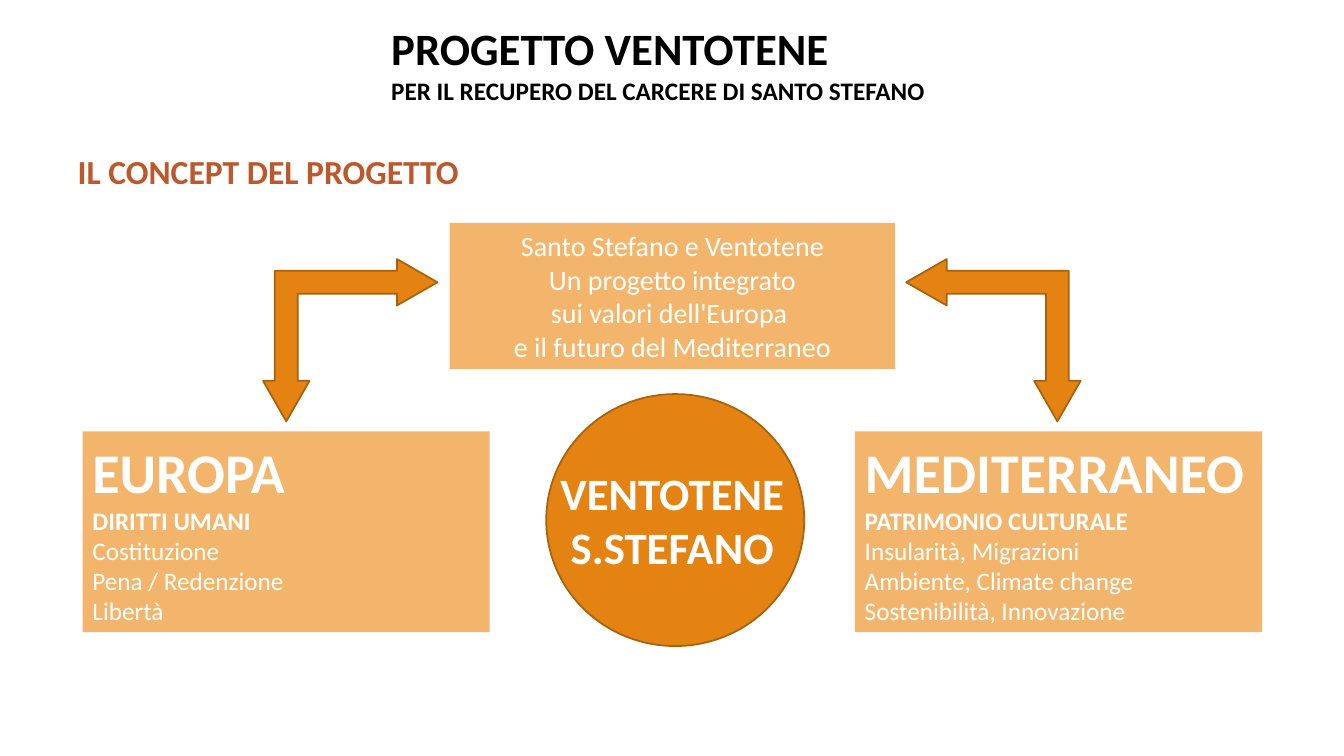
from pptx import Presentation
from pptx.dml.color import RGBColor
from pptx.enum.shapes import MSO_SHAPE
from pptx.enum.text import MSO_ANCHOR, PP_ALIGN
from pptx.util import Pt

RECT, OVAL, ELBOW = MSO_SHAPE.RECTANGLE, MSO_SHAPE.OVAL, MSO_SHAPE.LEFT_UP_ARROW
LEFT, CENTER = PP_ALIGN.LEFT, PP_ALIGN.CENTER
TOP, MIDDLE = MSO_ANCHOR.TOP, MSO_ANCHOR.MIDDLE
BLACK, WHITE, RUST = "000000", "FFFFFF", "BD582C"
PALE, ORANGE, BROWN = "F3B56C", "E48312", "A9610D"


def write(holder, lines, color, align, anchor):
    """Fill a text frame with (text, size, bold) lines."""
    frame = holder.text_frame
    frame.word_wrap = True
    frame.vertical_anchor = anchor
    frame.text = "\n".join(text for text, size, bold in lines)
    for paragraph, (text, size, bold) in zip(frame.paragraphs, lines):
        paragraph.alignment = align
        font = paragraph.runs[0].font
        font.name, font.size, font.bold = "Calibri", Pt(size), bold
        font.color.rgb = RGBColor.from_string(color)


def add_figure(kind, left, top, width, height, fill, outline=None):
    figure = slide.shapes.add_shape(kind, Pt(left), Pt(top), Pt(width), Pt(height))
    figure.shadow.inherit = False
    figure.fill.solid()
    figure.fill.fore_color.rgb = RGBColor.from_string(fill)
    if outline:
        figure.line.color.rgb = RGBColor.from_string(outline)
        figure.line.width = Pt(1.25)
    else:
        figure.line.fill.background()
    return figure


prs = Presentation()
prs.slide_width, prs.slide_height = Pt(960), Pt(540)
slide = prs.slides.add_slide(prs.slide_layouts[5])

# Title and section heading
title = slide.shapes.title
title.left, title.top, title.width, title.height = Pt(272.2), Pt(11.5), Pt(405.4), Pt(67.7)
write(title, [("PROGETTO VENTOTENE", 32, True),
              ("PER IL RECUPERO DEL CARCERE DI SANTO STEFANO", 18, True)], BLACK, LEFT, TOP)
heading = slide.shapes.add_textbox(Pt(48.4), Pt(104.4), Pt(405.4), Pt(36))
write(heading, [("IL CONCEPT DEL PROGETTO", 24, True)], RUST, LEFT, TOP)

# Shared concept
concept = add_figure(RECT, 321.2, 159.2, 318.2, 104.4, PALE)
concept_lines = ["Santo Stefano e Ventotene", "Un progetto integrato",
                 "sui valori dell'Europa ", "e il futuro del Mediterraneo"]
write(concept, [(line, 20, False) for line in concept_lines], WHITE, CENTER, MIDDLE)

# The two themes
themes = [
    (59, "EUROPA", "DIRITTI UMANI", ["Costituzione", "Pena / Redenzione", "Libertà"]),
    (610.6, "MEDITERRANEO", "PATRIMONIO CULTURALE",
     ["Insularità, Migrazioni", "Ambiente, Climate change", "Sostenibilità, Innovazione"]),
]
for left, name, subject, topics in themes:
    theme = add_figure(RECT, left, 308.2, 290.9, 143.3, PALE)
    lines = [(name, 40, True), (subject, 18, True)] + [(topic, 18, False) for topic in topics]
    write(theme, lines, WHITE, LEFT, MIDDLE)

# Islands at the centre
add_figure(OVAL, 390.2, 281.5, 184.3, 180, ORANGE, BROWN)
islands = slide.shapes.add_textbox(Pt(378.7), Pt(329), Pt(203), Pt(85))
write(islands, [("VENTOTENE", 32, True), ("S.STEFANO", 32, True)], WHITE, CENTER, TOP)

# Elbow arrows from the concept to each theme, placed by their centres
for center_x, width, height, turn in [(250.2, 124.6, 116, 180), (709.6, 116, 124.6, 270)]:
    elbow = add_figure(ELBOW, center_x - width / 2, 243 - height / 2, width, height, ORANGE, BROWN)
    elbow.rotation = turn
    for index, ratio in enumerate([0.141, 0.143, 0.25]):
        elbow.adjustments[index] = ratio

prs.save("out.pptx")
